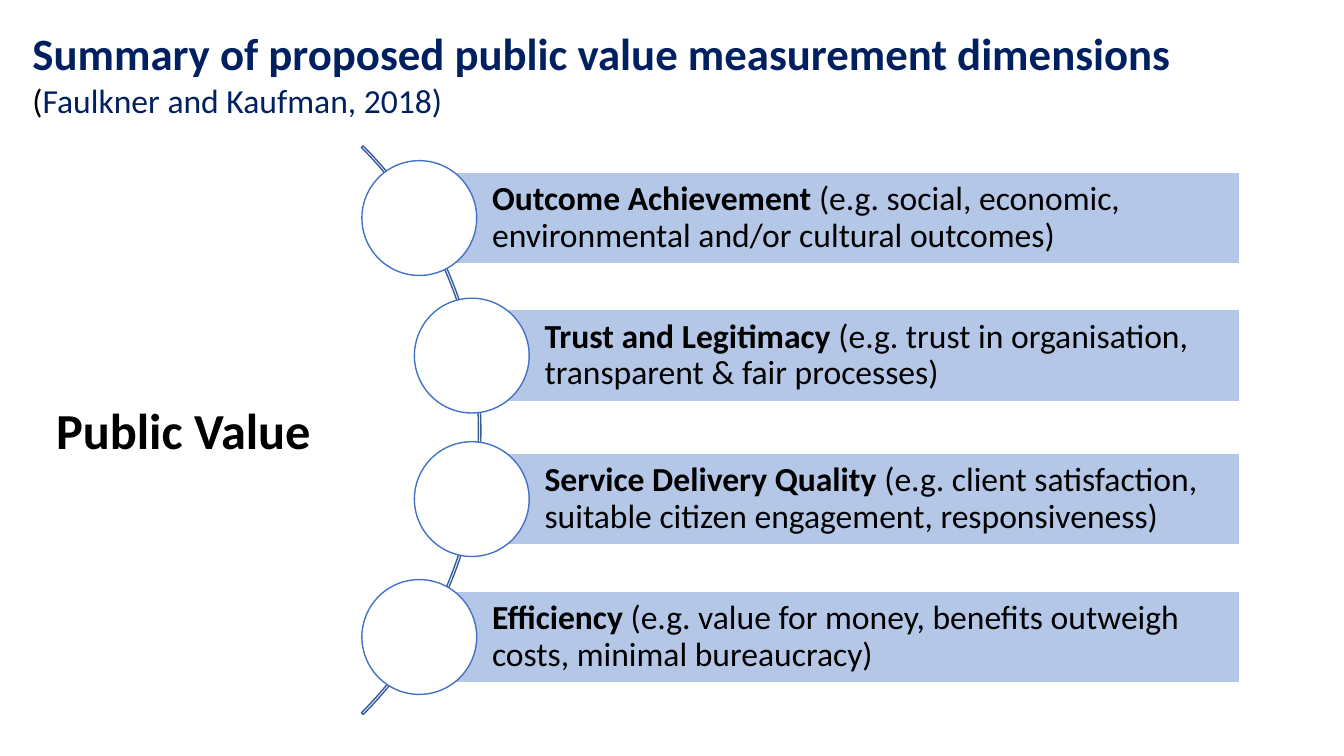
"""Build the slide that summarises the public value measurement dimensions."""
from pptx import Presentation
from pptx.dml import color
from pptx.enum import shapes, text
from pptx.util import Pt


def rgb(value):
    return color.RGBColor.from_string(value)


def write(box, spans):
    box.text_frame.text = ""
    para = box.text_frame.paragraphs[0]
    para.alignment = text.PP_ALIGN.LEFT
    for words, size, tint, bold in spans:
        span = para.add_run()
        span.text = words
        span.font.name = "Calibri"
        span.font.size = Pt(size)
        span.font.bold = bold
        span.font.color.rgb = rgb(tint)
    return para


deck = Presentation()
deck.slide_width, deck.slide_height = Pt(960), Pt(540)
page = deck.slides.add_slide(deck.slide_layouts[5])

title = page.shapes.title
title.left, title.top, title.width, title.height = Pt(16), Pt(15), Pt(867.5), Pt(75)
title.text_frame.vertical_anchor = text.MSO_ANCHOR.TOP
title.text_frame.auto_size = text.MSO_AUTO_SIZE.NONE
write(title, [
    ("Summary of proposed public value measurement dimensions ", 32, "002060", True),
    ("(", 24, "000000", False),
    ("Faulkner and Kaufman, 2018)", 24, "002060", False),
])

arc = page.shapes.add_shape(
    shapes.MSO_SHAPE.BLOCK_ARC, Pt(-231), Pt(20), Pt(574.5), Pt(574.5))
arc.adjustments[0], arc.adjustments[1], arc.adjustments[2] = 189, 27, 0.003
arc.shadow.inherit = False
arc.fill.background()
arc.line.color.rgb = rgb("365B9D")
arc.line.width = Pt(1)

dimensions = [
    (299.5, 155.75, "Outcome Achievement",
     " (e.g. social, economic, environmental and/or cultural outcomes)"),
    (337, 254, "Trust and Legitimacy",
     " (e.g. trust in organisation, transparent & fair processes)"),
    (337, 356.5, "Service Delivery Quality",
     " (e.g. client satisfaction, suitable citizen engagement, responsiveness)"),
    (299.5, 455, "Efficiency",
     " (e.g. value for money, benefits outweigh costs, minimal bureaucracy)"),
]
bar_right, bar_height, diameter = 885.5, 65.5, 82

for center_x, center_y, name, examples in dimensions:
    bar = page.shapes.add_shape(
        shapes.MSO_SHAPE.RECTANGLE, Pt(center_x), Pt(center_y - bar_height / 2),
        Pt(bar_right - center_x), Pt(bar_height))
    circle = page.shapes.add_shape(
        shapes.MSO_SHAPE.OVAL, Pt(center_x - diameter / 2), Pt(center_y - diameter / 2),
        Pt(diameter), Pt(diameter))
    for shape, fill, line in ((bar, "B4C7E7", "FFFFFF"), (circle, "FFFFFF", "4472C4")):
        shape.shadow.inherit = False
        shape.fill.solid()
        shape.fill.fore_color.rgb = rgb(fill)
        shape.line.color.rgb = rgb(line)
        shape.line.width = Pt(1)
    frame = bar.text_frame
    frame.vertical_anchor = text.MSO_ANCHOR.MIDDLE
    frame.margin_left = Pt(52)
    frame.margin_top = frame.margin_right = frame.margin_bottom = Pt(5)
    para = write(bar, [(name, 24, "000000", True), (examples, 24, "000000", False)])
    para.line_spacing = 0.9

label = page.shapes.add_textbox(Pt(33), Pt(281.5), Pt(199), Pt(51))
label.text_frame.word_wrap = False
write(label, [("Public Value", 36, "000000", True)])

deck.save("out.pptx")
